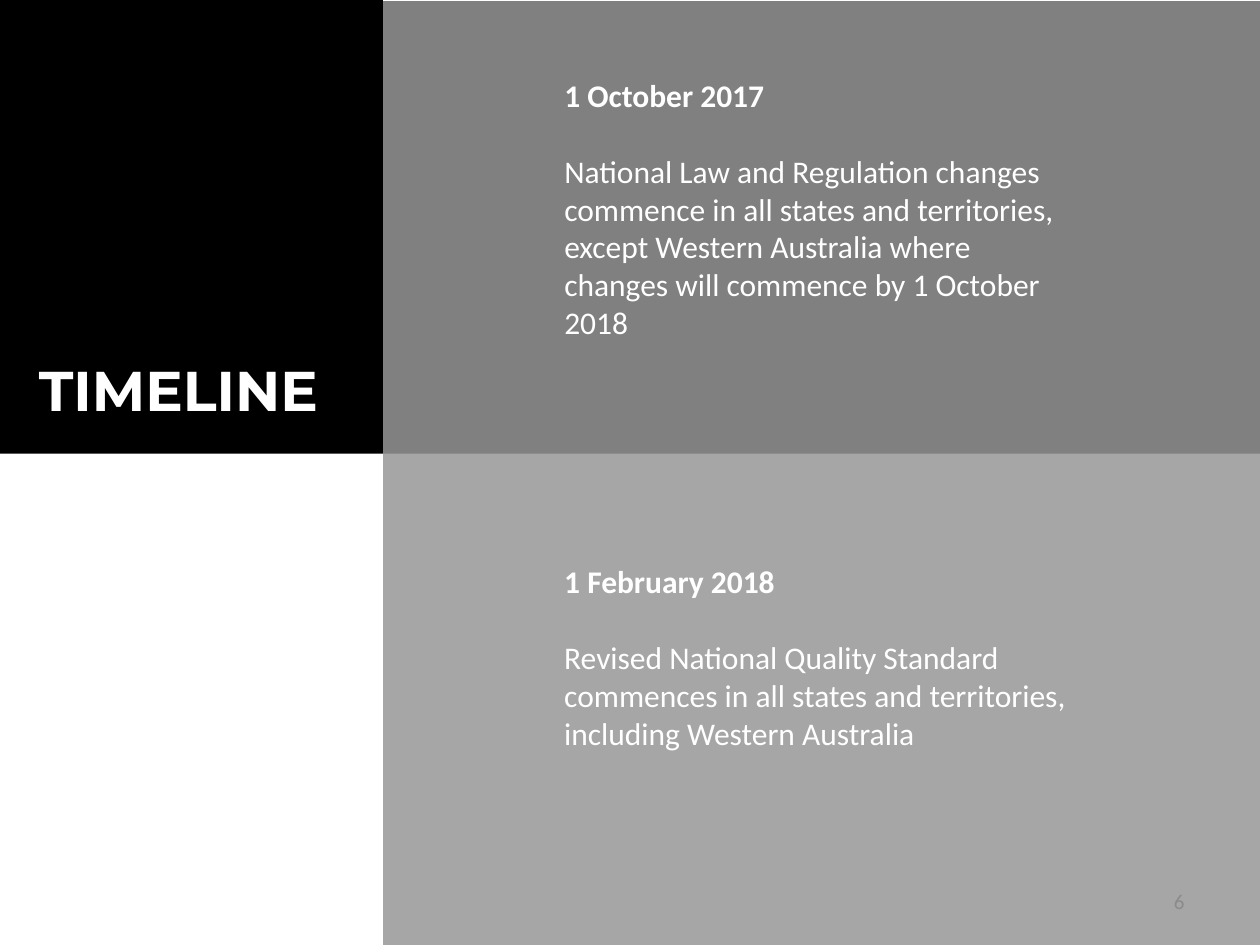
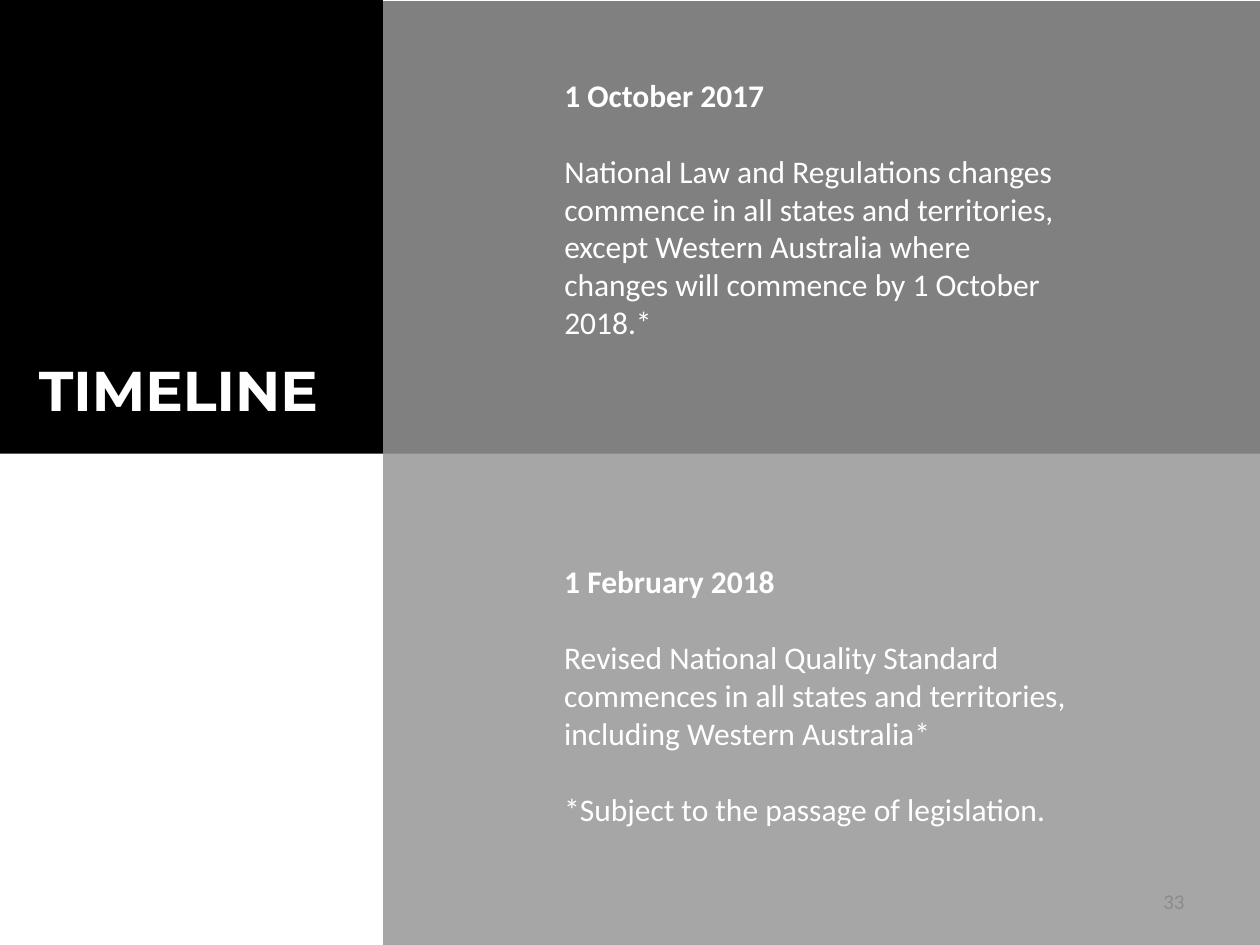
from pptx import Presentation
from pptx.dml.color import RGBColor
from pptx.enum.shapes import MSO_SHAPE
from pptx.enum.text import MSO_ANCHOR, PP_ALIGN
from pptx.util import Inches, Pt

BLACK = RGBColor(0x00, 0x00, 0x00)
WHITE = RGBColor(0xFF, 0xFF, 0xFF)
DARK = RGBColor(0x80, 0x80, 0x80)
LIGHT = RGBColor(0xA6, 0xA6, 0xA6)
FAINT = RGBColor(0x8B, 0x8B, 0x8B)

# Grid: two columns and two rows
WIDE, HIGH = 10, 7.5
COL = 3.04
ROW = 0.48 * HIGH
LEFT = 4.38
GAP = Pt(22)

BANDS = [
    (0, 0, COL, ROW, BLACK),
    (COL, 0.01, WIDE - COL, ROW, DARK),
    (COL, ROW, WIDE - COL, HIGH - ROW, LIGHT),
]

# Page number, then the paragraphs of the upper and lower band
PAGES = [
    ("6",
     ["1 October 2017",
      "National Law and Regulation changes commence in all states and "
      "territories, except Western Australia where changes will commence "
      "by 1 October 2018"],
     ["1 February 2018",
      "Revised National Quality Standard commences in all states and "
      "territories, including Western Australia"]),
    ("33",
     ["1 October 2017",
      "National Law and Regulations changes commence in all states and "
      "territories, except Western Australia where changes will commence "
      "by 1 October 2018.*"],
     ["1 February 2018",
      "Revised National Quality Standard commences in all states and "
      "territories, including Western Australia*",
      "*Subject to the passage of legislation."]),
]


def add_band(slide, x, y, w, h, fill):
    band = slide.shapes.add_shape(
        MSO_SHAPE.RECTANGLE, Inches(x), Inches(y), Inches(w), Inches(h))
    band.shadow.inherit = False
    band.fill.solid()
    band.fill.fore_color.rgb = fill
    band.line.fill.background()


def add_text(slide, x, y, w, h, lines, size, color=WHITE, font="Calibri",
             bold=True):
    """Stack paragraphs one line apart; only the first may be bold."""
    box = slide.shapes.add_textbox(Inches(x), Inches(y), Inches(w), Inches(h))
    frame = box.text_frame
    frame.word_wrap = True
    frame.text = "\n".join(lines)
    for i, para in enumerate(frame.paragraphs):
        if i:
            para.space_before = GAP
        for run in para.runs:
            run.font.name = font
            run.font.size = Pt(size)
            run.font.bold = bold and i == 0
            run.font.color.rgb = color
    return frame


deck = Presentation()
deck.slide_width = Inches(WIDE)
deck.slide_height = Inches(HIGH)

for number, upper, lower in PAGES:
    slide = deck.slides.add_slide(deck.slide_layouts[6])

    # Colour bands
    for band in BANDS:
        add_band(slide, *band)

    # Title and dated text
    add_text(slide, 0.21, 2.77, 3.41, 0.64, ["TIMELINE"], 32,
             font="Montserrat")
    add_text(slide, LEFT, 0.55, 4.28, 2.22, upper, 18)
    add_text(slide, LEFT, 4.41, 4.5, 0.72 + 0.6 * len(lower), lower, 18)

    # Page number
    foot = add_text(slide, 7.17, 6.95, 2.33, 0.4, [number], 12, FAINT,
                    bold=False)
    foot.vertical_anchor = MSO_ANCHOR.MIDDLE
    foot.paragraphs[0].alignment = PP_ALIGN.RIGHT

deck.save("out.pptx")
